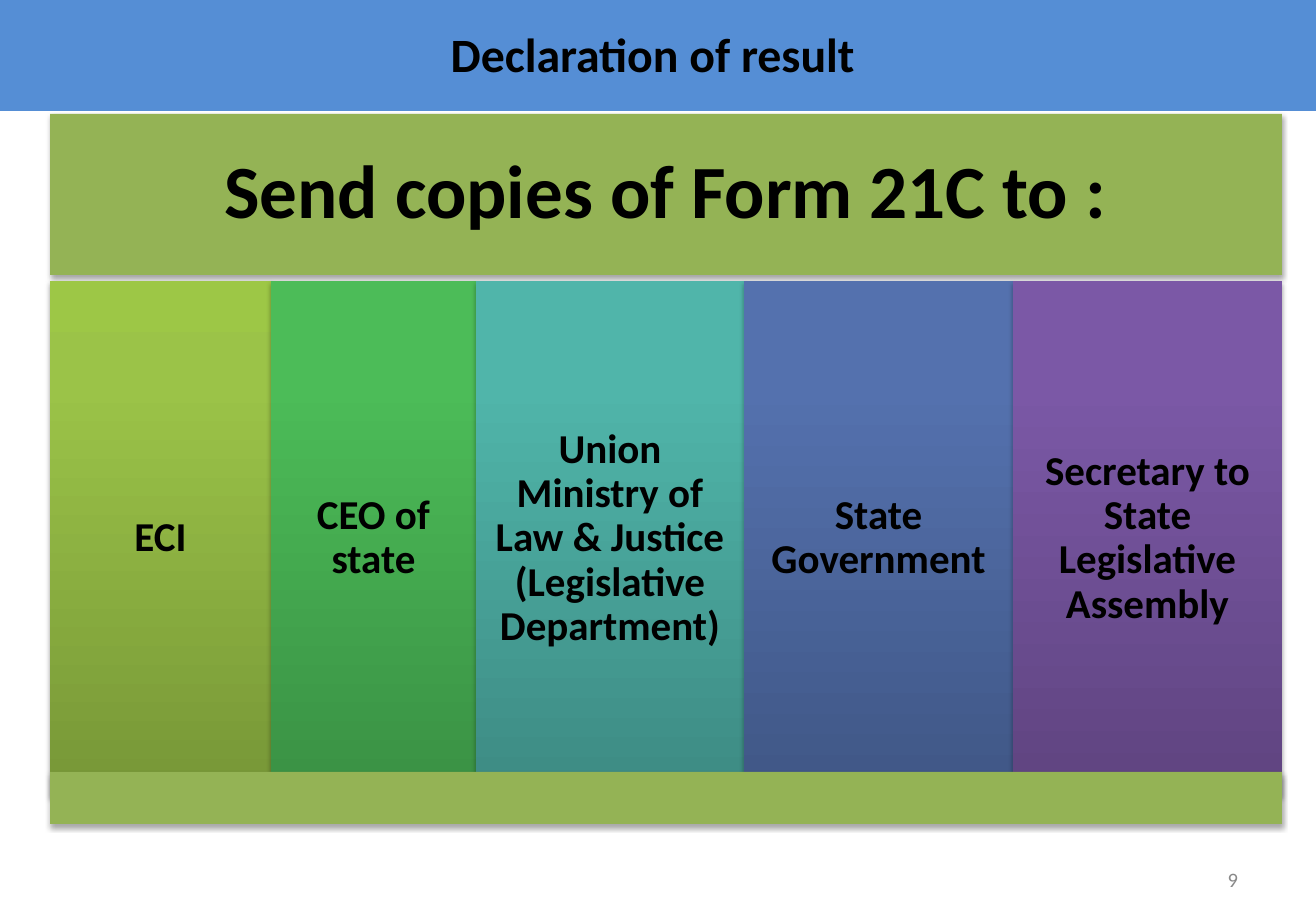
from lxml.etree import SubElement
from pptx import Presentation
from pptx.dml.color import RGBColor
from pptx.enum.shapes import MSO_SHAPE
from pptx.enum.text import MSO_ANCHOR, PP_ALIGN
from pptx.oxml import parse_xml
from pptx.oxml.ns import nsdecls, qn
from pptx.util import Emu, Pt

PX = 914400 / 123
SLIDE_WIDTH, SLIDE_HEIGHT = 1316, 922

BLACK = RGBColor(0x00, 0x00, 0x00)
GREY = RGBColor(0x89, 0x89, 0x89)
BLUE = RGBColor(0x55, 0x8E, 0xD5)
OLIVE = RGBColor(0x94, 0xB3, 0x55)

TITLE = "Declaration of result "
HEADING = "Send copies of Form 21C to :"
PAGE_NUMBER = "9"
# Recipient, column width, gradient from bottom to top
RECIPIENTS = [
    ("ECI", 221, ("779737", "9BC348", "9DC746")),
    ("CEO of state", 205, ("3A9144", "4CBC58", "4ABF57")),
    ("Union Ministry of Law & Justice (Legislative Department)", 268,
     ("3D8B83", "50B5AA", "4EB8AC")),
    ("State Government", 269, ("405786", "5471AE", "5271B0")),
    ("Secretary to State Legislative Assembly", 269,
     ("5F4480", "7B58A6", "7C57A8")),
]
STOPS = (0, 80, 100)

LEFT = 50
PANEL_WIDTH = sum(width for _, width, _ in RECIPIENTS)
COLUMN_TOP, COLUMN_HEIGHT = 281, 515


def px(length):
    return Emu(round(length * PX))


def write(shape, text, size, color=BLACK, bold=True, align=PP_ALIGN.CENTER,
          spacing=1.0, inset=12):
    frame = shape.text_frame
    frame.word_wrap = True
    frame.vertical_anchor = MSO_ANCHOR.MIDDLE
    frame.margin_left = frame.margin_right = px(inset)
    frame.margin_top = frame.margin_bottom = px(min(inset, 22))
    para = frame.paragraphs[0]
    para.alignment = align
    para.line_spacing = spacing
    span = para.add_run()
    span.text = text
    span.font.name = "Calibri"
    span.font.size = Pt(size)
    span.font.bold = bold
    span.font.color.rgb = color


def add_box(page, left, top, width, height, fill=None):
    box = page.shapes.add_shape(MSO_SHAPE.RECTANGLE, px(left), px(top),
                                px(width), px(height))
    box.shadow.inherit = False
    box.line.fill.background()
    if fill is not None:
        box.fill.solid()
        box.fill.fore_color.rgb = fill
    return box


def add_shadow(box):
    effects = box.element.spPr.find(qn("a:effectLst"))
    shadow = SubElement(effects, qn("a:outerShdw"), blurRad=str(Pt(3.1)),
                        dist=str(Pt(1.8)), dir="5400000", rotWithShape="0")
    color = SubElement(shadow, qn("a:srgbClr"), val="000000")
    SubElement(color, qn("a:alpha"), val="35000")


def fill_upwards(box, colors):
    """Fill the box with a gradient that runs from bottom to top."""
    stops = "".join(
        f'<a:gs pos="{stop * 1000}"><a:srgbClr val="{color}"/></a:gs>'
        for stop, color in zip(STOPS, colors))
    gradient = parse_xml(
        f'<a:gradFill {nsdecls("a")} rotWithShape="1"><a:gsLst>{stops}</a:gsLst>'
        '<a:lin ang="16200000" scaled="0"/></a:gradFill>')
    box.element.spPr.find(qn("a:prstGeom")).addnext(gradient)


def main():
    deck = Presentation()
    deck.slide_width, deck.slide_height = px(SLIDE_WIDTH), px(SLIDE_HEIGHT)
    page = deck.slides.add_slide(deck.slide_layouts[6])

    heading = add_box(page, LEFT, 114, PANEL_WIDTH, 161, OLIVE)
    add_shadow(heading)
    write(heading, HEADING, 44, spacing=0.9, inset=22)

    left = LEFT
    for recipient, width, colors in RECIPIENTS:
        column = add_box(page, left, COLUMN_TOP, width, COLUMN_HEIGHT)
        fill_upwards(column, colors)
        add_shadow(column)
        write(column, recipient, 24, spacing=0.9)
        left += width

    add_shadow(add_box(page, LEFT, 772, PANEL_WIDTH, 52, OLIVE))

    write(add_box(page, 0, -5, SLIDE_WIDTH, 116, BLUE), TITLE, 28)

    number = page.shapes.add_textbox(px(943), px(855), px(307), px(49))
    write(number, PAGE_NUMBER, 12, color=GREY, bold=False,
          align=PP_ALIGN.RIGHT)

    deck.save("out.pptx")


if __name__ == "__main__":
    main()
